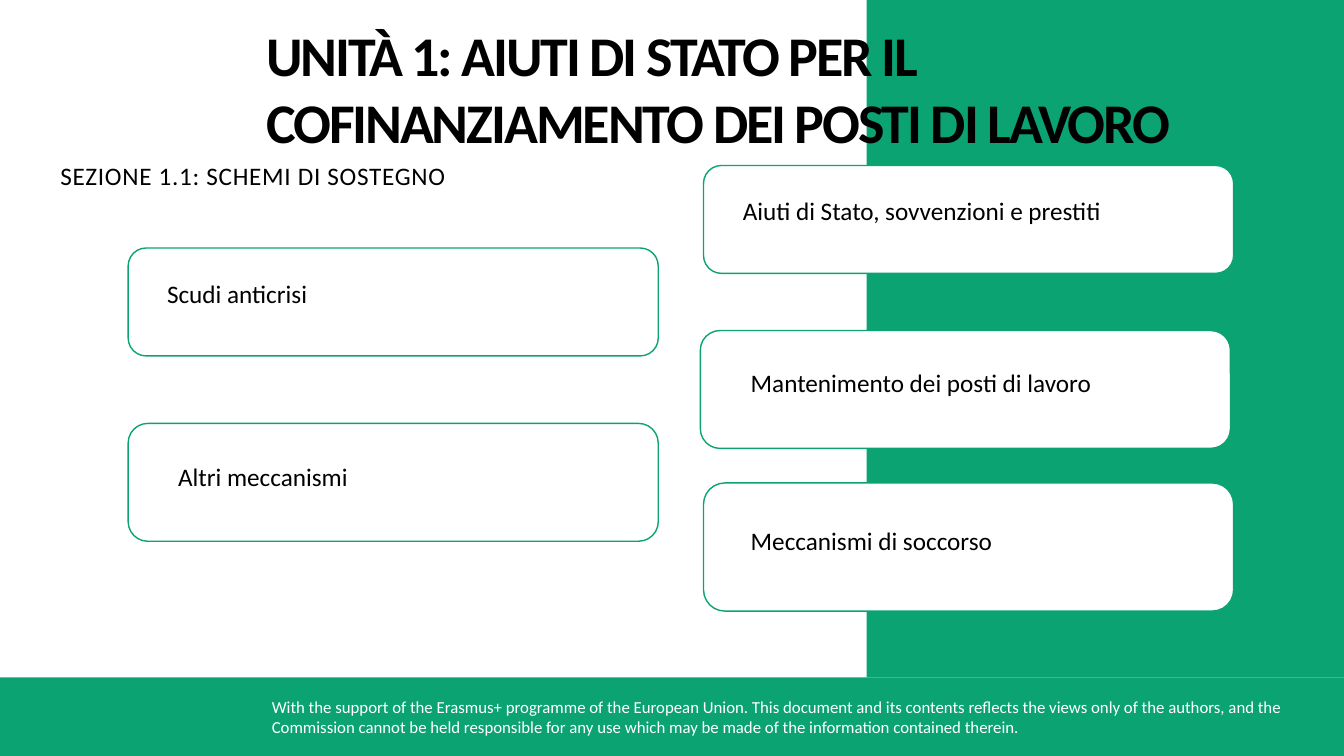
from dataclasses import dataclass

from pptx import Presentation
from pptx import util as u
from pptx.dml.color import RGBColor
from pptx.enum import shapes, text
from pptx.shapes.autoshape import Shape
from pptx.slide import Slide

COLOURS = {"green": "0CA373", "white": "FFFFFF", "black": "000000"}
FONT = "Calibri"
CARD_WIDTH = 13.36
LABEL_WIDTH, LABEL_HEIGHT = 9.83, 1.8


@dataclass
class Box:
    left: float
    top: float
    width: float
    height: float

    def lengths(self) -> list[u.Length]:
        return [u.Cm(v) for v in (self.left, self.top, self.width, self.height)]


@dataclass
class Scheme:
    wording: str
    left: float
    top: float
    height: float
    label_left: float
    label_top: float


SCHEMES = [
    Scheme("Aiuti di Stato, sovvenzioni e prestiti", 17.73, 4.17, 2.72, 18.47, 4.8),
    Scheme("Mantenimento dei posti di lavoro", 17.65, 8.33, 2.97, 18.67, 9.14),
    Scheme("Meccanismi di soccorso", 17.73, 12.17, 3.23, 18.67, 13.11),
    Scheme("Scudi anticrisi", 3.23, 6.25, 2.72, 3.96, 6.88),
    Scheme("Altri meccanismi", 3.23, 10.67, 2.97, 4.24, 11.51),
]
BANDS = [Box(0, 17.07, 33.87, 1.98), Box(21.84, 0, 12.03, 17.07)]


def colour(name: str) -> RGBColor:
    return RGBColor.from_string(COLOURS[name])


def add_panel(slide: Slide, kind: shapes.MSO_SHAPE, box: Box, fill: str) -> Shape:
    panel = slide.shapes.add_shape(kind, *box.lengths())
    panel.shadow.inherit = False
    panel.fill.solid()
    panel.fill.fore_color.rgb = colour(fill)
    panel.line.fill.background()
    return panel


def write(holder: Shape, wording: str, size: float, ink: str = "black",
          bold: bool = False, spacing: int = 0) -> None:
    frame = holder.text_frame
    frame.word_wrap = True
    frame.auto_size = text.MSO_AUTO_SIZE.NONE
    frame.vertical_anchor = text.MSO_ANCHOR.TOP
    paragraph = frame.paragraphs[0]
    paragraph.text = wording
    paragraph.alignment = text.PP_ALIGN.LEFT
    font = paragraph.font
    font.name, font.size, font.bold = FONT, u.Pt(size), bold
    font.color.rgb = colour(ink)
    if spacing:
        font._element.set("spc", str(spacing))


def add_label(slide: Slide, box: Box, wording: str, size: float,
              ink: str = "black", spacing: int = 0) -> None:
    write(slide.shapes.add_textbox(*box.lengths()), wording, size, ink, spacing=spacing)


def add_title(slide: Slide) -> None:
    title = slide.shapes.title
    title.left, title.top, title.width, title.height = Box(6.71, 0.48, 25.5, 5.21).lengths()
    write(title, "UNITÀ 1: AIUTI DI STATO PER IL COFINANZIAMENTO DEI POSTI DI LAVORO",
          40, bold=True, spacing=-150)
    frame = title.text_frame
    frame.margin_left = frame.margin_right = frame.margin_bottom = 0
    frame.margin_top = u.Cm(0.03)
    slide.shapes._spTree.append(title._element)


def add_scheme(slide: Slide, scheme: Scheme) -> None:
    card = add_panel(slide, shapes.MSO_SHAPE.ROUNDED_RECTANGLE,
                     Box(scheme.left, scheme.top, CARD_WIDTH, scheme.height), "white")
    card.line.color.rgb = colour("green")
    card.line.width = u.Pt(1)
    add_label(slide, Box(scheme.label_left, scheme.label_top, LABEL_WIDTH, LABEL_HEIGHT),
              scheme.wording, 18)


def main() -> None:
    deck = Presentation()
    deck.slide_width, deck.slide_height = u.Cm(33.87), u.Cm(19.05)
    slide = deck.slides.add_slide(deck.slide_layouts[5])
    for band in BANDS:
        add_panel(slide, shapes.MSO_SHAPE.RECTANGLE, band, "green")
    add_label(slide, Box(6.6, 17.42, 26.47, 1.27),
              "With the support of the Erasmus+ programme of the European Union. "
              "This document and its contents reflects the views only of the authors, "
              "and the Commission cannot be held responsible for any use which may be "
              "made of the information contained therein.", 12, "white")
    add_title(slide)
    for scheme in SCHEMES:
        add_scheme(slide, scheme)
    add_label(slide, Box(1.27, 3.91, 16.92, 1.83),
              "SEZIONE 1.1: SCHEMI DI SOSTEGNO", 18, spacing=50)
    deck.save("out.pptx")


if __name__ == "__main__":
    main()
